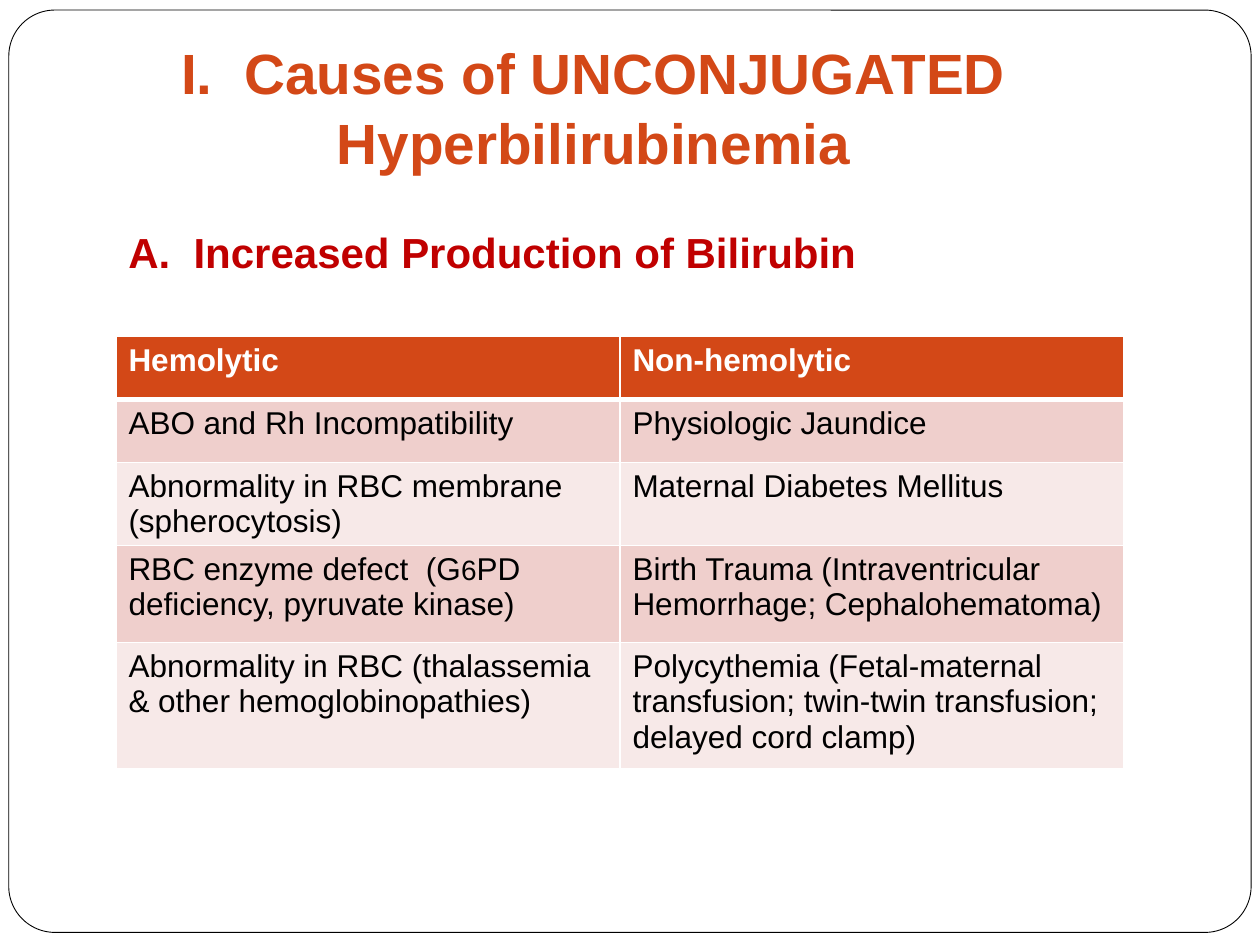
from lxml import etree
from pptx import Presentation
from pptx.dml.color import RGBColor
from pptx.enum.shapes import MSO_SHAPE
from pptx.enum.text import MSO_ANCHOR, MSO_AUTO_SIZE, PP_ALIGN
from pptx.oxml.ns import qn
from pptx.util import Inches, Pt

ROUNDED = MSO_SHAPE.ROUNDED_RECTANGLE
BOTTOM = MSO_ANCHOR.BOTTOM
NO_AUTOFIT = MSO_AUTO_SIZE.NONE
CENTER = PP_ALIGN.CENTER
TITLE_ONLY = 5

FONT = "Arial"
WHITE, BLACK = "FFFFFF", "000000"
ORANGE, RED = "D34817", "C00000"
BANDS = ("EFCFCC", "F7E9E8")

ROW_HEIGHTS = (0.5, 0.5, 0.64, 0.77, 1)
# A cell is a list of (text, size) spans
CAUSES = [
    ([("Hemolytic", 18)], [("Non-hemolytic", 18)]),
    ([("ABO and Rh Incompatibility", 18)], [("Physiologic Jaundice", 18)]),
    ([("Abnormality in RBC membrane (spherocytosis)", 18)],
     [("Maternal Diabetes Mellitus", 18)]),
    ([("RBC enzyme defect  (G", 18), ("6", 16),
      ("PD deficiency, pyruvate kinase)", 18)],
     [("Birth Trauma (Intraventricular Hemorrhage; Cephalohematoma)", 18)]),
    ([("Abnormality in RBC (thalassemia & other hemoglobinopathies)", 18)],
     [("Polycythemia (Fetal-maternal transfusion; twin-twin transfusion; "
       "delayed cord clamp)", 18)]),
]


def color(value):
    return RGBColor.from_string(value)


def inches(box):
    return [Inches(length) for length in box]


def style(span, size, tint, bold):
    span.font.name = FONT
    span.font.size = Pt(size)
    span.font.bold = bold
    span.font.color.rgb = color(tint)


def add_frame(page, box):
    frame = page.shapes.add_shape(ROUNDED, *inches(box))
    frame.adjustments[0] = 0.05
    frame.shadow.inherit = False
    frame.fill.solid()
    frame.fill.fore_color.rgb = color(WHITE)
    frame.line.color.rgb = color(BLACK)
    frame.line.width = Pt(0.5)
    # Send the frame behind the title
    page.shapes.element.insert(2, frame.element)


def set_title(page, box, text):
    title = page.shapes.title
    title.left, title.top, title.width, title.height = inches(box)
    body = title.text_frame
    body.text = text
    body.word_wrap = True
    body.auto_size = NO_AUTOFIT
    body.vertical_anchor = BOTTOM
    body.margin_bottom = Inches(0.1)
    para = body.paragraphs[0]
    para.alignment = CENTER
    para.line_spacing = 1.04
    style(para.runs[0], 32.4, ORANGE, True)


def add_heading(page, box, text):
    body = page.shapes.add_textbox(*inches(box)).text_frame
    body.text = text
    body.word_wrap = True
    style(body.paragraphs[0].runs[0], 24, RED, True)


def set_borders(cell, top, bottom):
    properties = cell._tc.get_or_add_tcPr()
    for side, width in (("L", 1), ("R", 1), ("T", top), ("B", bottom)):
        line = etree.SubElement(properties, qn(f"a:ln{side}"), w=str(Pt(width)))
        fill = etree.SubElement(line, qn("a:solidFill"))
        etree.SubElement(fill, qn("a:srgbClr"), val=WHITE)


def fill_cell(cell, spans, row):
    header = row == 0
    set_borders(cell, top=3 if row == 1 else 1, bottom=3 if header else 1)
    cell.fill.solid()
    cell.fill.fore_color.rgb = color(ORANGE if header else BANDS[(row - 1) % 2])
    para = cell.text_frame.paragraphs[0]
    for text, size in spans:
        span = para.add_run()
        span.text = text
        style(span, size, WHITE if header else BLACK, header)


def add_causes_table(page, box):
    table = page.shapes.add_table(len(CAUSES), 2, *inches(box)).table
    for row, (height, cells) in enumerate(zip(ROW_HEIGHTS, CAUSES)):
        table.rows[row].height = Inches(height)
        for column, spans in enumerate(cells):
            fill_cell(table.cell(row, column), spans, row)


def main():
    deck = Presentation()
    deck.slide_width, deck.slide_height = Inches(10), Inches(7.5)
    page = deck.slides.add_slide(deck.slide_layouts[TITLE_ONLY])
    add_frame(page, (0.07, 0.08, 9.86, 7.32))
    set_title(page, (1.25, 0.42, 6.92, 1.08),
              "I.  Causes of UNCONJUGATED Hyperbilirubinemia")
    add_causes_table(page, (0.92, 2.67, 8, sum(ROW_HEIGHTS)))
    add_heading(page, (0.92, 1.75, 7.83, 0.5),
                "A.  Increased Production of Bilirubin")
    deck.save("out.pptx")


if __name__ == "__main__":
    main()
